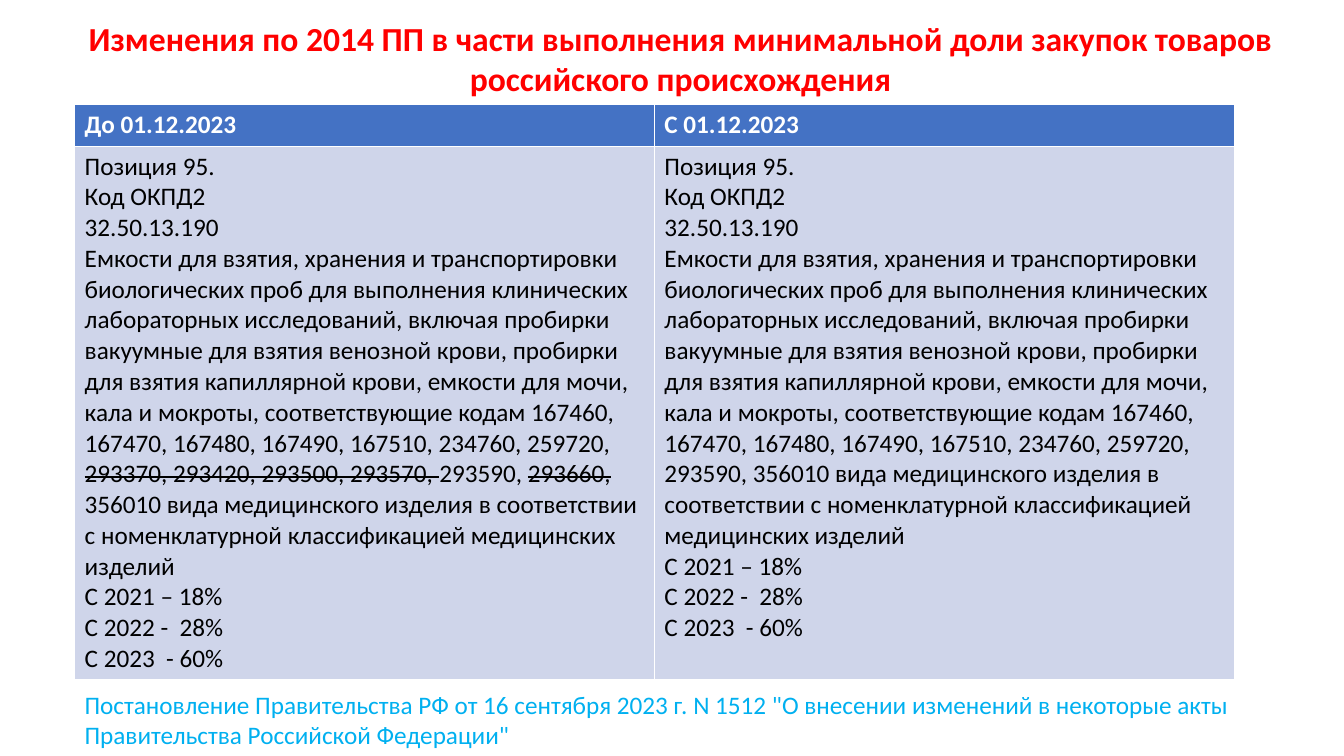
from pptx import Presentation
from pptx.dml.color import RGBColor
from pptx.enum.text import PP_ALIGN
from pptx.util import Inches, Pt

CENTER = PP_ALIGN.CENTER
LEFT = PP_ALIGN.LEFT
FONT = "Calibri"
RED = RGBColor(0xFF, 0x00, 0x00)
SKY = RGBColor(0x00, 0xB0, 0xF0)
BLUE = RGBColor(0x44, 0x72, 0xC4)
PALE = RGBColor(0xCF, 0xD5, 0xEA)
WHITE = RGBColor(0xFF, 0xFF, 0xFF)
BLACK = RGBColor(0x00, 0x00, 0x00)

TITLE = ("Изменения по 2014 ПП в части выполнения минимальной доли "
         "закупок товаров российского происхождения")
SOURCE = ("Постановление Правительства РФ от 16 сентября 2023 г. N 1512 "
          "\"О внесении изменений в некоторые акты Правительства Российской Федерации\"")
HEADINGS = ["До 01.12.2023", "С 01.12.2023"]
POSITION = ["Позиция 95.", "Код ОКПД2", "32.50.13.190"]
SHARES = ["С 2021 – 18%", "C 2022 -  28%", "C 2023  - 60%"]
GOODS = ("Емкости для взятия, хранения и транспортировки биологических проб для "
         "выполнения клинических лабораторных исследований, включая пробирки "
         "вакуумные для взятия венозной крови, пробирки для взятия капиллярной "
         "крови, емкости для мочи, кала и мокроты, соответствующие кодам 167460, "
         "167470, 167480, 167490, 167510, 234760, 259720, ")
KEPT_CODE = "293590, "
ENDING = ("356010 вида медицинского изделия в соответствии с номенклатурной "
          "классификацией медицинских изделий")
# Each description is a list of (text, struck out) pieces.
OLD_GOODS = [(GOODS, False), ("293370, 293420, 293500, 293570, ", True),
             (KEPT_CODE, False), ("293660, ", True), (ENDING, False)]
NEW_GOODS = [(GOODS + KEPT_CODE + ENDING, False)]


def format_span(span, size, color, bold=False):
    span.font.name = FONT
    span.font.size = Pt(size)
    span.font.bold = bold
    span.font.color.rgb = color


def add_text(slide, box, text, size, color, bold=False, align=LEFT):
    frame = slide.shapes.add_textbox(*map(Inches, box)).text_frame
    frame.word_wrap = True
    frame.text = text
    para = frame.paragraphs[0]
    para.alignment = align
    format_span(para.runs[0], size, color, bold)


def fill_cell(cell, paragraphs, background, color, bold=False):
    """Write paragraphs given as lists of (text, struck out) pieces."""
    cell.fill.solid()
    cell.fill.fore_color.rgb = background
    frame = cell.text_frame
    for index, pieces in enumerate(paragraphs):
        para = frame.add_paragraph() if index else frame.paragraphs[0]
        for text, struck in pieces:
            span = para.add_run()
            span.text = text
            format_span(span, 18, color, bold)
            if struck:
                span._r.get_or_add_rPr().set("strike", "sngStrike")


def add_comparison(slide, box):
    table = slide.shapes.add_table(2, 2, *map(Inches, box)).table
    header_height = 0.41
    table.rows[0].height = Inches(header_height)
    table.rows[1].height = Inches(box[3] - header_height)
    for column, goods in enumerate([OLD_GOODS, NEW_GOODS]):
        fill_cell(table.cell(0, column), [[(HEADINGS[column], False)]], BLUE, WHITE, True)
        paragraphs = [[(line, False)] for line in POSITION]
        paragraphs.append(goods)
        paragraphs += [[(line, False)] for line in SHARES]
        fill_cell(table.cell(1, column), paragraphs, PALE, BLACK)


def main():
    deck = Presentation()
    deck.slide_width = Inches(13.33)
    deck.slide_height = Inches(7.5)
    slide = deck.slides.add_slide(deck.slide_layouts[6])
    add_comparison(slide, (0.74, 1.04, 11.5, 5.61))
    add_text(slide, (0.74, 6.79, 11.86, 0.71), SOURCE, 18, SKY)
    add_text(slide, (0.45, 0.13, 12.6, 0.91), TITLE, 24, RED, True, CENTER)
    deck.save("out.pptx")


if __name__ == "__main__":
    main()
